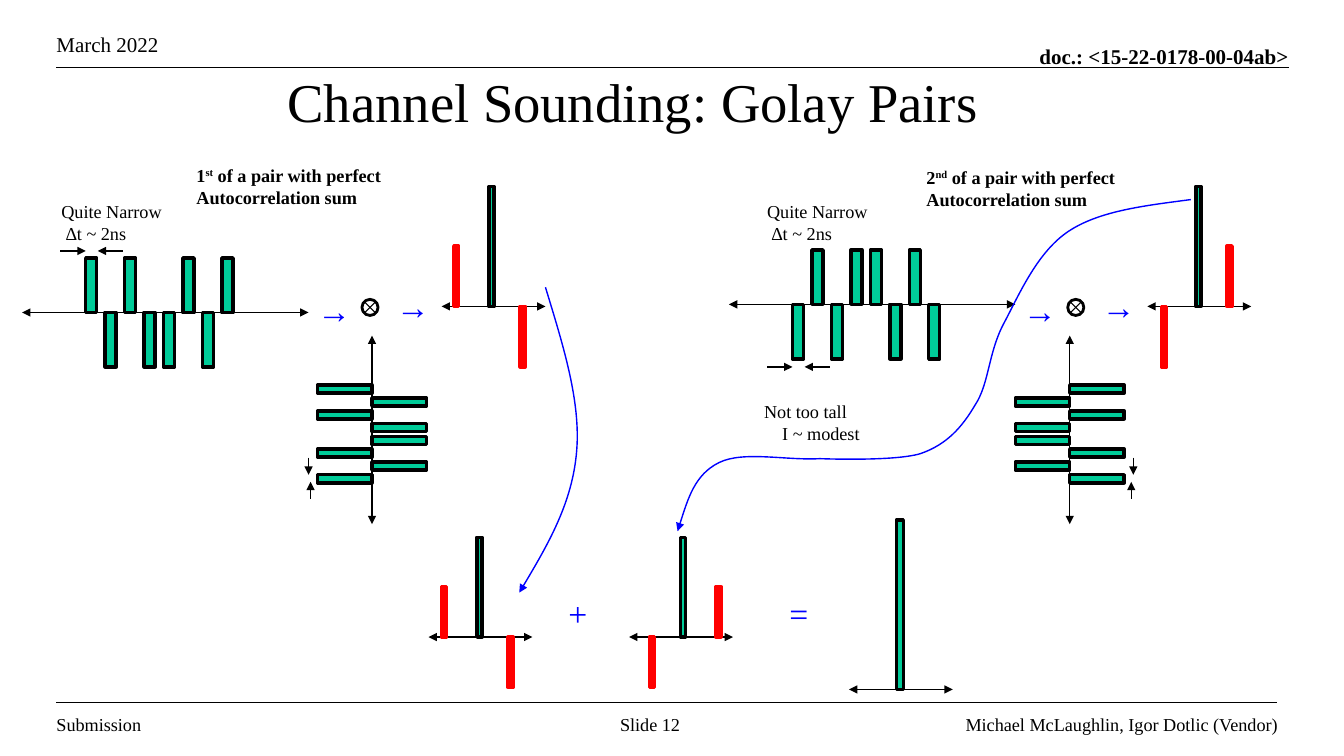
from dataclasses import dataclass

from lxml import etree
from pptx import Presentation
from pptx import util as u
from pptx.dml.color import RGBColor
from pptx.enum import shapes as kinds, text
from pptx.oxml.ns import qn

COLUMNS, ROWS = 1333, 750
CELL = u.Inches(0.01)
PULSE_CODE = (1, -1, 1, -1, -1, 1, -1, 1)
HALF_SHIFT = 700


@dataclass(frozen=True)
class Theme:
    font: str = "Times New Roman"
    ink: RGBColor = RGBColor(0, 0, 0)
    pulse: RGBColor = RGBColor(0, 0xCC, 0x99)
    sidelobe: RGBColor = RGBColor(0xFF, 0, 0)
    accent: RGBColor = RGBColor(0, 0, 0xFF)
    title: int = 39
    symbol: int = 24
    header: int = 15
    body: int = 13
    outline: float = 2.5
    thin: float = 1


THEME = Theme()


def grid(*cells):
    return [u.Emu(round(cell * CELL)) for cell in cells]


def style_paragraph(paragraph, size, color=THEME.ink, bold=False, align=text.PP_ALIGN.LEFT):
    paragraph.alignment = align
    font = paragraph.font
    font.name, font.size, font.bold = THEME.font, u.Pt(size), bold
    font.color.rgb = color


def add_label(shapes, box, lines, size=THEME.body, indent=0, inset=True, **style):
    frame = shapes.add_textbox(*grid(*box)).text_frame
    frame.word_wrap = True
    if not inset:
        frame.margin_left = frame.margin_right = frame.margin_top = frame.margin_bottom = 0
    frame.text = "\n".join(lines)
    for paragraph in frame.paragraphs:
        style_paragraph(paragraph, size, **style)
    if indent:
        frame.paragraphs[-1]._p.get_or_add_pPr().set("marL", str(grid(indent)[0]))
    return frame


def add_pair_label(shapes, box, number, suffix):
    paragraph = add_label(shapes, box, [number], bold=True).paragraphs[0]
    ordinal = paragraph.add_run()
    ordinal.text = suffix
    ordinal._r.get_or_add_rPr().set("baseline", "30000")
    paragraph.add_run().text = " of a pair with perfect Autocorrelation sum"


def add_arrowheads(shape, ends):
    outline = shape.element.spPr.find(qn("a:ln"))
    for end in ends:
        etree.SubElement(outline, qn(f"a:{end}"), type="triangle")


def add_line(shapes, start, end, ends=(), width=THEME.thin):
    line = shapes.add_connector(kinds.MSO_CONNECTOR.STRAIGHT, *grid(*start, *end))
    line.line.color.rgb = THEME.ink
    line.line.width = u.Pt(width)
    add_arrowheads(line, ends)
    etree.SubElement(line.element.spPr, qn("a:effectLst"))


def add_axis(shapes, start, end):
    add_line(shapes, start, end, ("headEnd", "tailEnd"))


def add_pointer(shapes, start, end):
    add_line(shapes, start, end, ("tailEnd",))


def add_bar(shapes, box, fill=THEME.pulse, outline=THEME.ink):
    bar = shapes.add_shape(kinds.MSO_SHAPE.RECTANGLE, *grid(*box))
    bar.shadow.inherit = False
    bar.fill.solid()
    bar.fill.fore_color.rgb = fill
    bar.line.color.rgb = outline
    bar.line.width = u.Pt(THEME.outline)


def add_pulse_train(slide, left, axis, polarity, pointer_row):
    shapes = slide.shapes.add_group_shape().shapes
    for index, sign in enumerate(PULSE_CODE):
        top = axis - 54 if sign == polarity else axis
        add_bar(shapes, (left + 19.3 * index, top, 11, 54))
    add_axis(shapes, (left - 63, axis), (left + 221, axis))
    add_pointer(shapes, (left - 25, pointer_row), (left, pointer_row))
    add_pointer(shapes, (left + 37, pointer_row), (left + 12, pointer_row))


def add_upright_train(slide, axis, direction):
    shapes = slide.shapes.add_group_shape().shapes
    for index, sign in enumerate(PULSE_CODE):
        left = axis if sign == direction else axis - 54
        add_bar(shapes, (left, 471 - 12.7 * index, 54, 8))
    add_axis(shapes, (axis, 520), (axis, 333))
    add_pointer(shapes, (axis + 61 * direction, 495), (axis + 61 * direction, 478))
    add_pointer(shapes, (axis + 63 * direction, 454), (axis + 63 * direction, 471))


def add_correlator(slide, left):
    shapes = slide.shapes.add_group_shape().shapes
    circle = shapes.add_shape(kinds.MSO_SHAPE.OVAL, *grid(left, 297, 16, 16))
    circle.shadow.inherit = False
    circle.fill.background()
    circle.line.color.rgb = THEME.ink
    circle.line.width = u.Pt(2)
    for start, end in ((299, 311), (311, 299)):
        add_line(shapes, (left + 14, start), (left + 2, end), width=0.75)


def add_correlation(slide, left, axis, peak, height, width=5, side=0, up=None, down=None):
    shapes = slide.shapes.add_group_shape().shapes
    add_bar(shapes, (left + peak, axis - height, width, height))
    add_axis(shapes, (left, axis), (left + 103, axis))
    for offset, top in ((up, axis - side), (down, axis)):
        if offset is not None:
            add_bar(shapes, (left + offset, top, 5, side), THEME.sidelobe, THEME.sidelobe)


def add_curve(slide, points):
    start, *controls = [grid(*point) for point in points]
    builder = slide.shapes.build_freeform(*start, scale=1.0)
    builder.add_line_segments(controls, close=False)
    curve = builder.convert_to_shape()
    segments = list(curve.element.iter(qn("a:lnTo")))
    for first in range(0, len(segments), 3):
        bezier = etree.SubElement(segments[first].getparent(), qn("a:cubicBezTo"))
        for segment in segments[first:first + 3]:
            bezier.append(segment[0])
            segment.getparent().remove(segment)
    curve.shadow.inherit = False
    curve.fill.background()
    curve.line.color.rgb = THEME.accent
    curve.line.width = u.Pt(THEME.thin)
    add_arrowheads(curve, ("tailEnd",))


def add_frame(slide):
    shapes, right = slide.shapes, text.PP_ALIGN.RIGHT
    add_label(shapes, (56, 31, 222, 25), ["March 2022"], THEME.header, inset=False)
    add_label(shapes, (700, 43, 578, 25), ["doc.: <15-22-0178-00-04ab>"], THEME.header,
              inset=False, bold=True, align=right)
    add_label(shapes, (56, 708, 104, 22), ["Submission"], inset=False)
    add_label(shapes, (615, 708, 104, 22), ["Slide 12"], inset=False)
    add_label(shapes, (689, 708, 578, 22), ["Michael McLaughlin, Igor Dotlic (Vendor)"],
              inset=False, align=right)
    add_line(shapes, (56, 67), (1278, 67))
    add_line(shapes, (56, 697), (1267, 697))


def add_title(slide, words):
    title = slide.shapes.title
    title.left, title.top, title.width, title.height = grid(61, 66, 1133, 68)
    frame = title.text_frame
    frame.text = words
    frame.auto_size = text.MSO_AUTO_SIZE.NONE
    frame.vertical_anchor = text.MSO_ANCHOR.MIDDLE
    style_paragraph(frame.paragraphs[0], THEME.title, align=text.PP_ALIGN.CENTER)


def add_symbol(slide, left, top, symbol):
    add_label(slide.shapes, (left, top, 64, 50), [symbol], THEME.symbol, color=THEME.accent)


def main():
    presentation = Presentation()
    presentation.slide_width, presentation.slide_height = grid(COLUMNS, ROWS)
    slide = presentation.slides.add_slide(presentation.slide_layouts[5])
    add_frame(slide)
    add_title(slide, "Channel Sounding: Golay Pairs")

    for shift in (0, HALF_SHIFT):
        add_label(slide.shapes, (51 + shift, 194, 208, 54), ["Quite Narrow", "∆t ~ 2ns"], indent=4.5)
        add_symbol(slide, 305 + shift, 283, "→")
        add_correlator(slide, 359 + shift)
        add_symbol(slide, 383 + shift, 279, "→")
    add_label(slide.shapes, (748, 392, 208, 54), ["Not too tall", "I ~ modest"], indent=18)
    add_pair_label(slide.shapes, (185, 158, 208, 54), "1", "st")
    add_pair_label(slide.shapes, (909, 160, 225, 54), "2", "nd")

    add_pulse_train(slide, 85, 310, 1, 249)
    add_pulse_train(slide, 786, 302, -1, 364)
    add_upright_train(slide, 369, -1)
    add_upright_train(slide, 1061, 1)

    add_correlation(slide, 438, 304, 47, 119, side=60, up=12, down=78)
    add_correlation(slide, 1138, 304, 48, 119, side=60, up=79, down=14)
    add_correlation(slide, 425, 632, 48, 99, side=50, up=13, down=79)
    add_correlation(slide, 624, 632, 51, 99, side=50, up=86, down=20)
    add_correlation(slide, 842, 684, 47, 168, width=7)
    add_symbol(slide, 554, 583, "+")
    add_symbol(slide, 773, 583, "=")

    add_curve(slide, [(541, 285), (558, 341), (576, 397), (572, 447),
                      (568, 498), (542, 543), (515, 588)])
    add_curve(slide, [(1181, 198), (1136, 204), (1090, 209), (1059, 230),
                      (1028, 251), (1010, 294), (995, 322), (980, 351), (981, 381), (967, 402),
                      (954, 424), (939, 441), (913, 450), (887, 458), (813, 455), (813, 455),
                      (780, 457), (737, 447), (713, 459), (689, 471), (681, 499), (672, 527)])
    presentation.save("out.pptx")


if __name__ == "__main__":
    main()
